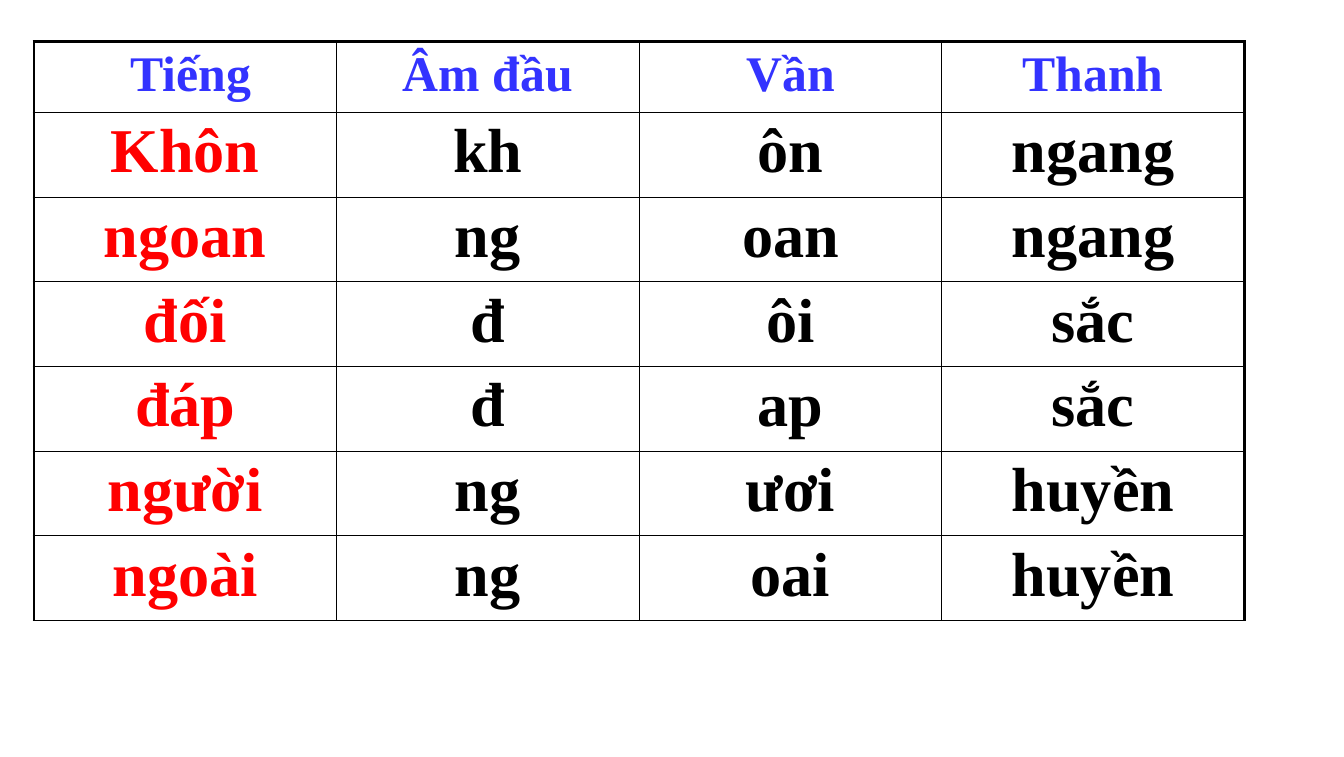
from lxml import etree
from pptx import Presentation
from pptx.dml.color import RGBColor
from pptx.enum.text import PP_ALIGN
from pptx.oxml.ns import qn
from pptx.util import Inches, Pt

CENTER = PP_ALIGN.CENTER
FONT = "Times New Roman"
COLORS = {"head": "3333FF", "word": "FF0000", "part": "000000", "line": "000000"}
THIN, THICK = 1, 2.25

ROWS = [
    (" Tiếng", "Âm đầu", "Vần", "Thanh"),
    ("Khôn", "kh", "ôn", "ngang"),
    ("ngoan", "ng", "oan", "ngang"),
    ("đối", "đ", "ôi", "sắc"),
    ("đáp", "đ", "ap", "sắc"),
    ("người", "ng", "ươi", "huyền"),
    ("ngoài", "ng", "oai", "huyền"),
]
COLS = len(ROWS[0])
LEFT, TOP = 0.34, 0.42
COL_W, HEAD_H, ROW_H = 3.04, 0.71, 0.85


def write(cell, text, size, color):
    par = cell.text_frame.paragraphs[0]
    par.alignment = CENTER
    gap = etree.SubElement(par._p.get_or_add_pPr(), qn("a:spcBef"))
    etree.SubElement(gap, qn("a:spcPct"), val="20000")
    run = par.add_run()
    run.text = text
    font = run.font
    font.name, font.size, font.bold = FONT, Pt(size), True
    font.color.rgb = RGBColor.from_string(COLORS[color])


def border(cell, widths):
    props = cell._tc.get_or_add_tcPr()
    for spot, (side, width) in enumerate(widths.items()):
        line = etree.Element(qn("a:ln" + side), w=str(int(Pt(width))))
        fill = etree.SubElement(line, qn("a:solidFill"))
        etree.SubElement(fill, qn("a:srgbClr"), val=COLORS["line"])
        props.insert(spot, line)


# Slide
deck = Presentation()
deck.slide_width, deck.slide_height = Inches(13.5), Inches(7.6)
slide = deck.slides.add_slide(deck.slide_layouts[6])

# Table grid
height = HEAD_H + ROW_H * (len(ROWS) - 1)
table = slide.shapes.add_table(
    len(ROWS), COLS, Inches(LEFT), Inches(TOP),
    Inches(COL_W * COLS), Inches(height)).table
table.first_row = table.horz_banding = False
for col in table.columns:
    col.width = Inches(COL_W)
for r, row in enumerate(table.rows):
    row.height = Inches(ROW_H if r else HEAD_H)

# Cells: syllable, initial, rhyme and tone
for r, words in enumerate(ROWS):
    for c, text in enumerate(words):
        cell = table.cell(r, c)
        cell.margin_left = cell.margin_right = Inches(0.14)
        cell.margin_top = cell.margin_bottom = Inches(0.05)
        cell.fill.background()
        color = "head" if r == 0 else "word" if c == 0 else "part"
        write(cell, text, size=45 if r else 36, color=color)
        border(cell, {
            "L": THIN if c else THICK,
            "R": THICK if c == COLS - 1 else THIN,
            "T": THIN if r else THICK,
            "B": THIN,
        })

deck.save("out.pptx")
